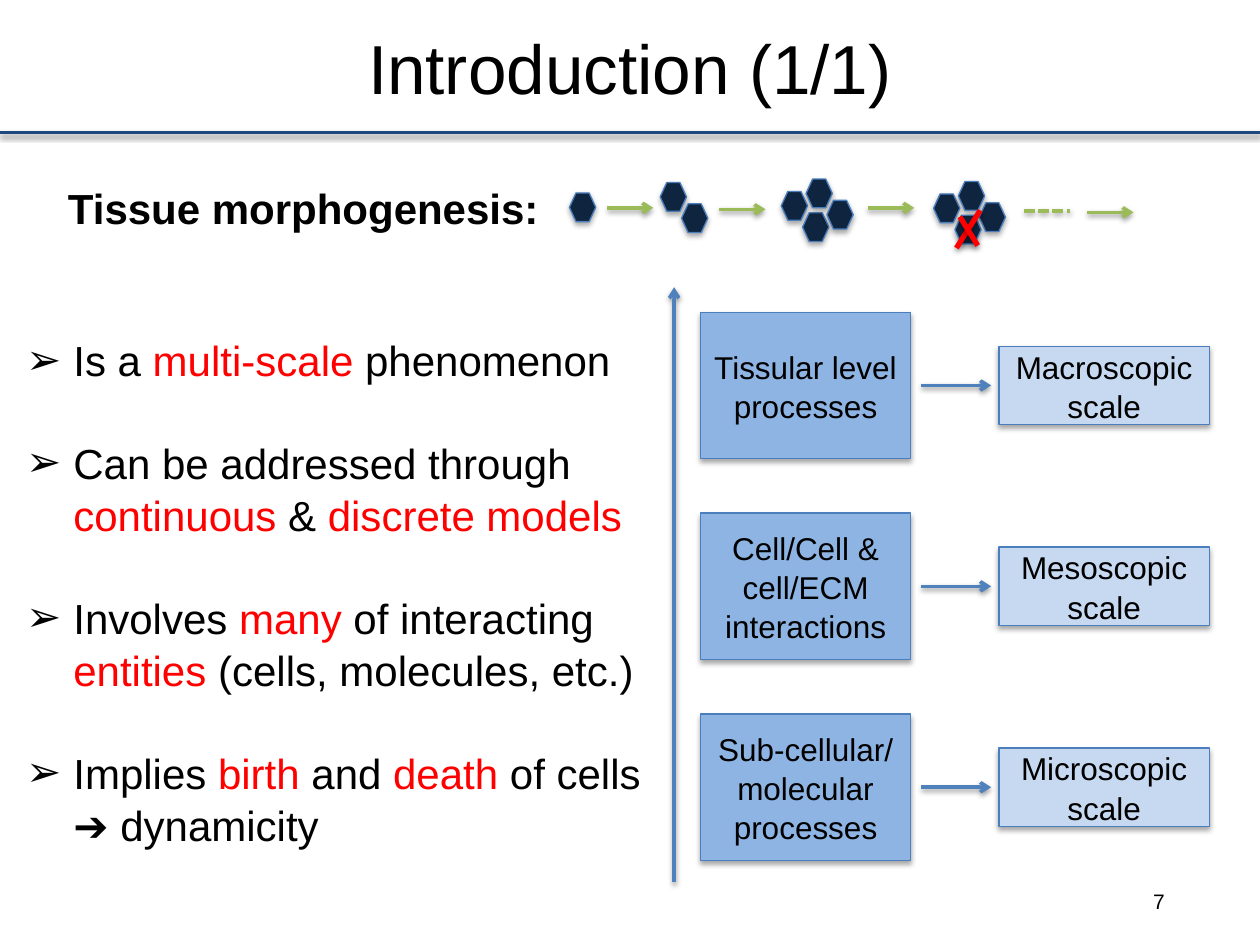
"""Builds the introduction slide on tissue morphogenesis."""
from lxml import etree
from pptx import Presentation
from pptx.dml.color import RGBColor
from pptx.enum.dml import MSO_LINE
from pptx.enum.shapes import MSO_CONNECTOR, MSO_SHAPE
from pptx.enum.text import MSO_ANCHOR, PP_ALIGN
from pptx.oxml.ns import qn
from pptx.util import Cm, Pt

RECT, HEXAGON = MSO_SHAPE.RECTANGLE, MSO_SHAPE.HEXAGON
STRAIGHT, DASH = MSO_CONNECTOR.STRAIGHT, MSO_LINE.SQUARE_DOT
LEFT, CENTER, RIGHT = PP_ALIGN.LEFT, PP_ALIGN.CENTER, PP_ALIGN.RIGHT
TOP, MIDDLE = MSO_ANCHOR.TOP, MSO_ANCHOR.MIDDLE

COLORS = {
    "text": "000000", "accent": "FF0000", "rule": "1F497D", "outline": "4B7EBC",
    "process": "8EB4E3", "scale": "C6D9F1", "arrow": "4F81BD",
    "cell": "0F243E", "step": "9BBB59",
}
TITLE = "Introduction (1/1)"
HEADING = "Tissue morphogenesis:"
PAGE = "7"
POINTS = [
    [("Is a ", "text"), ("multi-scale ", "accent"), ("phenomenon", "text")],
    [("Can be addressed through ", "text"), ("continuous", "accent"),
     (" & ", "text"), ("discrete models", "accent")],
    [("Involves ", "text"), ("many", "accent"), (" of interacting ", "text"),
     ("entities", "accent"), (" (cells, molecules, etc.)", "text")],
    [("Implies ", "text"), ("birth", "accent"), (" and ", "text"),
     ("death", "accent"), (" of cells ➔ dynamicity", "text")],
]
LEVELS = [
    (["Tissular level", "processes"], ["Macroscopic", "scale"]),
    (["Cell/Cell &", "cell/ECM", "interactions"], ["Mesoscopic", "scale"]),
    (["Sub-cellular/", "molecular processes"], ["Microscopic", "scale"]),
]
CLUSTER = [(0, 0), (0.43, 0.43), (0.5, -0.25), (0.92, 0.18)]
STAGES = [(11.48, 3.89, 1), (13.31, 3.68, 2), (15.75, 3.86, 4), (18.82, 3.91, 4)]
STEPS = [(12.24, 4.19), (14.5, 4.22), (17.5, 4.19), (21.92, 4.28)]
DASHED_STEP = (20.65, 4.25)
CROSS = [(19.28, 5, 19.76, 4.24), (19.35, 4.37, 19.71, 4.95)]
STEP_LENGTH = 0.93
CELL_W, CELL_H = 0.53, 0.58
BOX_W, PROCESS_H, SCALE_H = 4.24, 2.95, 1.58
FIRST_CENTER, LEVEL_PITCH = 7.77, 4.05


def rgb(name):
    return RGBColor.from_string(COLORS[name])


def add_shadow(sp, distance, alpha):
    sp_pr = sp._element.spPr
    for old in sp_pr.findall(qn("a:effectLst")):
        sp_pr.remove(old)
    effects = etree.SubElement(sp_pr, qn("a:effectLst"))
    shadow = etree.SubElement(effects, qn("a:outerShdw"), blurRad=str(Pt(3.1)),
                              dist=str(Pt(distance)), dir="5400000", rotWithShape="0")
    color = etree.SubElement(shadow, qn("a:srgbClr"), val="000000")
    etree.SubElement(color, qn("a:alpha"), val=str(alpha * 1000))


def write(tf, paragraphs, size, align=LEFT, anchor=TOP, bold=False, inset=None):
    frame = {"word_wrap": True, "vertical_anchor": anchor}
    if inset is not None:
        frame.update({"margin_" + side: Cm(inset)
                      for side in ("left", "right", "top", "bottom")})
    for key, value in frame.items():
        setattr(tf, key, value)
    for i, runs in enumerate(paragraphs):
        p = tf.paragraphs[0] if i == 0 else tf.add_paragraph()
        p.alignment, p.line_spacing = align, 1.04
        for text, color in runs:
            r = p.add_run()
            r.text = text
            for key, value in {"name": "Arial", "size": Pt(size), "bold": bold}.items():
                setattr(r.font, key, value)
            r.font.color.rgb = rgb(color)


def add_text(s, box, paragraphs, size, **style):
    sp = s.shapes.add_textbox(*map(Cm, box))
    write(sp.text_frame, paragraphs, size, **style)
    return sp.text_frame


def add_shape(s, kind, box, fill):
    sp = s.shapes.add_shape(kind, *map(Cm, box))
    sp.fill.solid()
    sp.fill.fore_color.rgb = rgb(fill)
    sp.line.color.rgb = rgb("outline")
    sp.line.width = Pt(0.75)
    add_shadow(sp, 1.8, 35)
    return sp


def add_level_box(s, left, center, height, fill, lines):
    sp = add_shape(s, RECT, (left, center - height / 2, BOX_W, height), fill)
    write(sp.text_frame, [[(line, "text")] for line in lines], 18,
          align=CENTER, anchor=MIDDLE, inset=0)


def add_line(s, ends, color, width=2, arrow=False, dash=None):
    line = s.shapes.add_connector(STRAIGHT, *map(Cm, ends))
    line.line.color.rgb = rgb(color)
    line.line.width = Pt(width)
    if dash:
        line.line.dash_style = dash
    if arrow:
        etree.SubElement(line.line._get_or_add_ln(), qn("a:tailEnd"), type="arrow")
    add_shadow(line, 1.6, 38)


def add_points(s):
    tf = add_text(s, (0.28, 6.58, 13.56, 12.4), POINTS, 24)
    for i, p in enumerate(tf.paragraphs):
        p_pr = p._p.get_or_add_pPr()
        p_pr.set("marL", str(Cm(0.95)))
        p_pr.set("indent", str(-Cm(0.95)))
        etree.SubElement(p_pr, qn("a:buFont"), typeface="Arial")
        etree.SubElement(p_pr, qn("a:buChar"), char="➢")
        if i:
            p.space_before = Pt(28.7)


def main():
    prs = Presentation()
    prs.slide_width, prs.slide_height = Cm(25.4), Cm(19.05)
    s = prs.slides.add_slide(prs.slide_layouts[5])
    add_line(s, (0, 2.67, 25.4, 2.67), "rule")

    title = s.shapes.title
    place = zip(("left", "top", "width", "height"), (1.9, 0.2, 21.6, 2.24))
    for key, value in place:
        setattr(title, key, Cm(value))
    write(title.text_frame, [[(TITLE, "text")]], 39.6, align=CENTER, anchor=MIDDLE)
    add_text(s, (21.44, 17.65, 2.29, 1.02), [[(PAGE, "text")]], 12,
             align=RIGHT, anchor=MIDDLE)
    add_text(s, (0.64, 3.51, 10.95, 1.27), [[(HEADING, "text")]], 24,
             align=CENTER, bold=True)
    add_points(s)

    for i, (process, scale) in enumerate(LEVELS):
        center = FIRST_CENTER + i * LEVEL_PITCH
        add_level_box(s, 14.12, center, PROCESS_H, "process", process)
        add_level_box(s, 20.14, center, SCALE_H, "scale", scale)
        add_line(s, (18.57, center, 19.98, center), "arrow", arrow=True)
    add_line(s, (13.59, 17.78, 13.59, 5.79), "arrow", arrow=True)

    for x, y, count in STAGES:
        for dx, dy in CLUSTER[:count]:
            add_shape(s, HEXAGON, (x + dx, y + dy, CELL_W, CELL_H), "cell")
    for x, y in STEPS:
        add_line(s, (x, y, x + STEP_LENGTH, y), "step", arrow=True)
    x, y = DASHED_STEP
    add_line(s, (x, y, x + STEP_LENGTH, y), "step", dash=DASH)
    for stroke in CROSS:
        add_line(s, stroke, "accent", width=3)
    prs.save("out.pptx")


if __name__ == "__main__":
    main()
